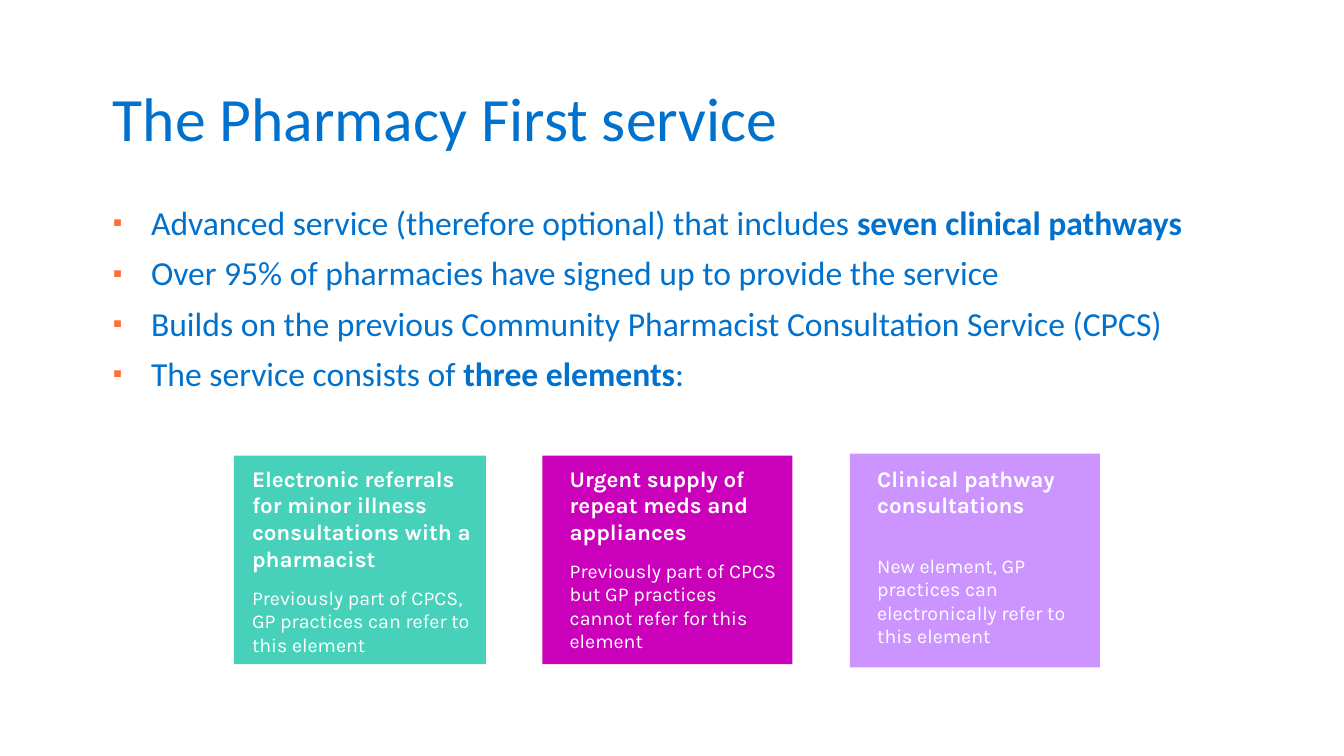
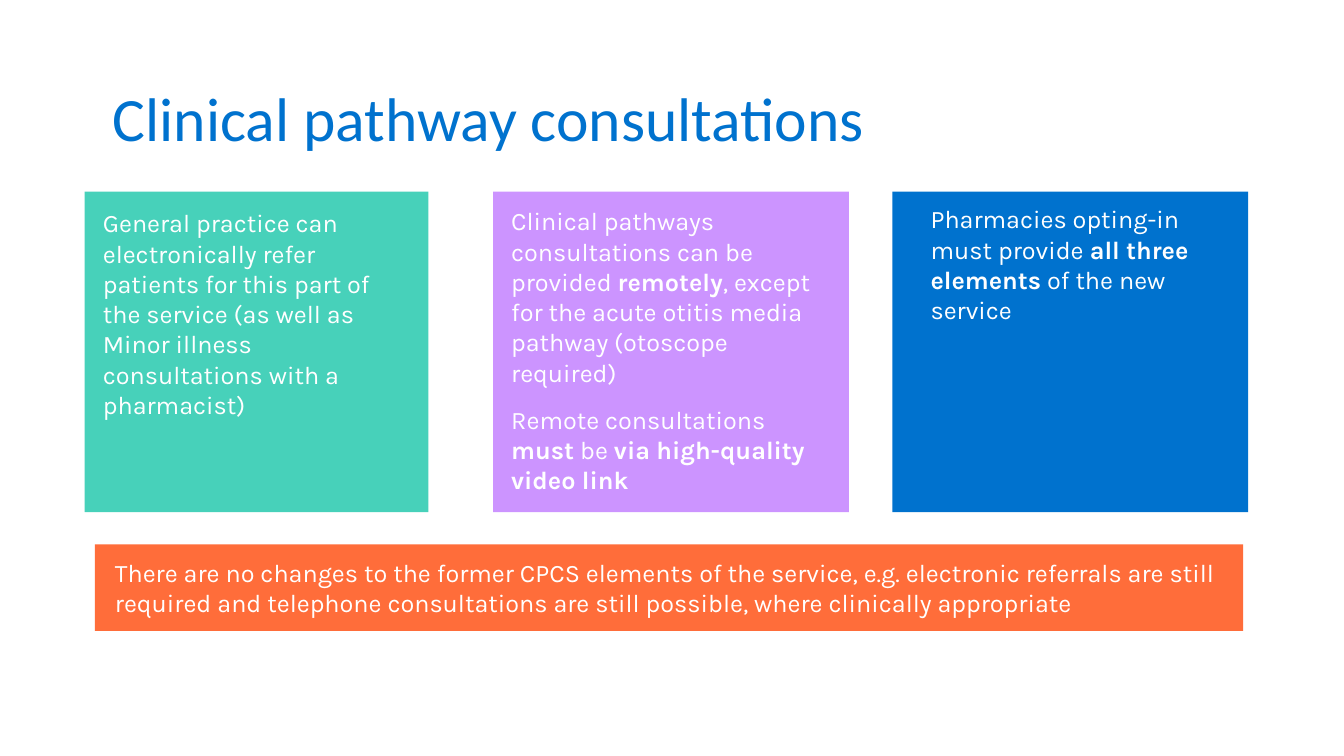
"""Build two slides on the Pharmacy First service."""
from dataclasses import dataclass

from lxml import etree
from pptx import Presentation, util as u
from pptx.dml.color import RGBColor
from pptx.enum import shapes, text
from pptx.oxml.ns import qn

PX = u.Inches(1) // 100
BLUE, TEAL, MAGENTA = "0072CE", "47D1BA", "CB00BA"
LILAC, ORANGE, WHITE = "CC94FF", "FF6D3A", "FFFFFF"
HEADING, CARD = "Calibri", "Karla"


@dataclass
class Box:
    x: int
    y: int
    w: int
    h: int

    def emu(self) -> tuple[int, ...]:
        return tuple(v * PX for v in (self.x, self.y, self.w, self.h))


@dataclass
class Para:
    text: str
    size: int = 18
    before: float = 0


@dataclass
class Card:
    box: Box
    fill: str
    left: int
    top: int
    right: int
    paras: list[Para]


def rgb(value: str) -> RGBColor:
    return RGBColor.from_string(value)


def add_runs(p, para: Para, font: str, color: str) -> None:
    p.space_before = u.Pt(para.before)
    for i, part in enumerate(para.text.split("**")):
        if part:
            r = p.add_run()
            r.text = part
            r.font.name = font
            r.font.size = u.Pt(para.size)
            r.font.bold = i % 2 == 1
            r.font.color.rgb = rgb(color)


def fill_text(tf, paras: list[Para], font: str, color: str) -> None:
    tf.word_wrap = True
    for i, para in enumerate(paras):
        p = tf.add_paragraph() if i else tf.paragraphs[0]
        p.alignment = text.PP_ALIGN.LEFT
        add_runs(p, para, font, color)


def add_bullet(p) -> None:
    ppr = p._p.get_or_add_pPr()
    ppr.set("marL", str(38 * PX))
    ppr.set("indent", str(-38 * PX))
    color = etree.SubElement(ppr, qn("a:buClr"))
    etree.SubElement(color, qn("a:srgbClr"), val=ORANGE)
    etree.SubElement(ppr, qn("a:buSzPct"), val="80000")
    etree.SubElement(ppr, qn("a:buFont"), typeface="Arial")
    etree.SubElement(ppr, qn("a:buChar"), char="▪")


def add_title(s, title: str) -> None:
    tf = s.shapes.add_textbox(*Box(102, 40, 1139, 145).emu()).text_frame
    tf.vertical_anchor = text.MSO_ANCHOR.MIDDLE
    fill_text(tf, [Para(title, 44)], HEADING, BLUE)
    tf.paragraphs[0].line_spacing = 1.1


def add_bullets(s, lines: list[str]) -> None:
    tf = s.shapes.add_textbox(*Box(102, 200, 1139, 230).emu()).text_frame
    paras = [Para(line, 24, 10 if i else 0) for i, line in enumerate(lines)]
    fill_text(tf, paras, HEADING, BLUE)
    for p in tf.paragraphs:
        p.line_spacing = 0.9
        add_bullet(p)


def add_card(s, card: Card) -> None:
    sp = s.shapes.add_shape(shapes.MSO_SHAPE.RECTANGLE, *card.box.emu())
    sp.shadow.inherit = False
    sp.fill.solid()
    sp.fill.fore_color.rgb = rgb(card.fill)
    sp.line.fill.background()
    tf = sp.text_frame
    tf.vertical_anchor = text.MSO_ANCHOR.TOP
    tf.margin_left, tf.margin_top = card.left * PX, card.top * PX
    tf.margin_right, tf.margin_bottom = card.right * PX, 0
    fill_text(tf, card.paras, CARD, WHITE)


def add_slide(prs, title: str, cards: list[Card]):
    s = prs.slides.add_slide(prs.slide_layouts[6])
    add_title(s, title)
    for card in cards:
        add_card(s, card)
    return s


def element(head: str, detail: str, gap: float = 9.5) -> list[Para]:
    return [Para(f"**{head}**", 16), Para(detail, 14, gap)]


BULLETS = [
    "Advanced service (therefore optional) that includes **seven clinical pathways**",
    "Over 95% of pharmacies have signed up to provide the service",
    "Builds on the previous Community Pharmacist Consultation Service (CPCS)",
    "The service consists of **three elements**:",
]

ELEMENTS = [
    Card(Box(232, 452, 250, 207), TEAL, 18, 9, 11, element(
        "Electronic referrals for minor illness consultations with a pharmacist",
        "Previously part of CPCS, GP practices can refer to this element")),
    Card(Box(538, 452, 248, 207), MAGENTA, 27, 9, 9, element(
        "Urgent supply of repeat meds and appliances",
        "Previously part of CPCS but GP practices cannot refer for this element")),
    Card(Box(843, 450, 248, 212), LILAC, 27, 11, 9, element(
        "Clinical pathway consultations",
        "New element, GP practices can electronically refer to this element", 25)),
]

PATHWAYS = [
    Card(Box(84, 190, 341, 318), TEAL, 18, 16, 15, [Para(
        "General practice can electronically refer patients for this part of the "
        "service (as well as Minor illness consultations with a pharmacist)")]),
    Card(Box(489, 190, 353, 318), LILAC, 18, 14, 23, [
        Para("Clinical pathways consultations can be provided **remotely**, except "
             "for the acute otitis media pathway (otoscope required)"),
        Para("Remote consultations **must** be **via high-quality video link**",
             before=12)]),
    Card(Box(885, 190, 353, 318), BLUE, 38, 12, 6, [Para(
        "Pharmacies opting-in must provide **all three elements** of the new service")]),
    Card(Box(94, 540, 1139, 86), ORANGE, 20, 13, 19, [Para(
        "There are no changes to the former CPCS elements of the service, e.g. "
        "electronic referrals are still required and telephone consultations are "
        "still possible, where clinically appropriate")]),
]


def main() -> None:
    prs = Presentation()
    prs.slide_width, prs.slide_height = 1333 * PX, 750 * PX
    s = add_slide(prs, "The Pharmacy First service", ELEMENTS)
    add_bullets(s, BULLETS)
    add_slide(prs, "Clinical pathway consultations", PATHWAYS)
    prs.save("out.pptx")


if __name__ == "__main__":
    main()
